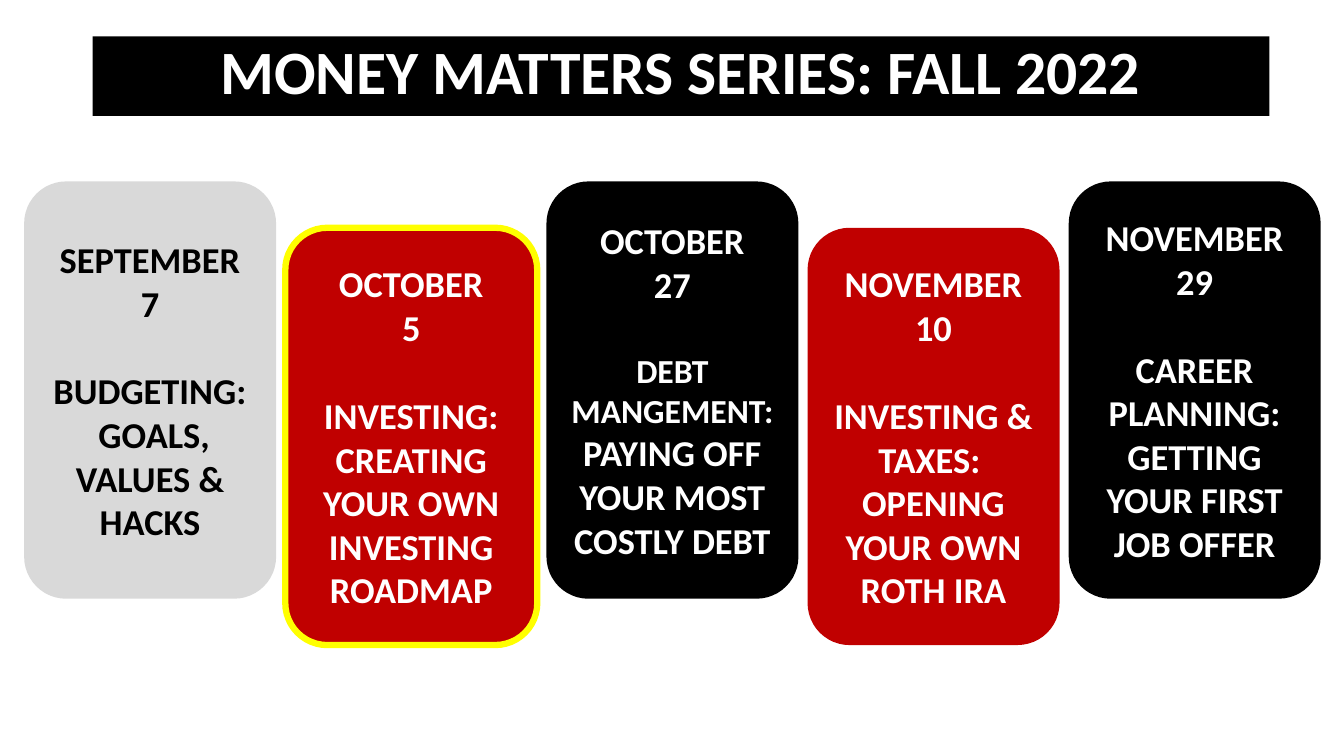
"""Build the Money Matters series slide with its five session cards."""
import dataclasses

import pptx
import pptx.dml.color
import pptx.enum.shapes
import pptx.enum.text
import pptx.slide
import pptx.util

SLIDE_WIDTH = pptx.util.Inches(13.33)
SLIDE_HEIGHT = pptx.util.Inches(7.5)
FONT = "Calibri"
BLACK, WHITE, RED, GRAY, YELLOW = "000000", "FFFFFF", "C00000", "D9D9D9", "FFFF00"
CARD_SIZE = 26
CARD_LEFT, CARD_PITCH, CARD_WIDTH = 1.8, 19.43, 18.75
CARD_TOP, CARD_DROP, CARD_HEIGHT = 24, 6.13, 55.2


@dataclasses.dataclass(frozen=True)
class Piece:
    text: str
    size: int = CARD_SIZE


@dataclasses.dataclass(frozen=True)
class Session:
    date: str
    topic: tuple[tuple[Piece, ...], ...]
    fill: str
    color: str = WHITE
    outline: str | None = None


SESSIONS = (
    Session("SEPTEMBER\v7", ((Piece("BUDGETING:"),), (Piece(" GOALS, VALUES & HACKS"),)),
            GRAY, BLACK),
    Session("OCTOBER\v5", ((Piece("INVESTING:"),),
                           (Piece("CREATING YOUR OWN INVESTING ROADMAP"),)),
            RED, outline=YELLOW),
    Session("OCTOBER\v27", ((Piece("DEBT MANGEMENT: ", 24),
                             Piece("PAYING OFF YOUR MOST COSTLY DEBT")),), BLACK),
    Session("NOVEMBER 10", ((Piece("INVESTING & TAXES: \vOPENING YOUR OWN ROTH IRA"),),), RED),
    Session("NOVEMBER\v29", ((Piece("CAREER PLANNING: GETTING YOUR FIRST JOB OFFER"),),), BLACK),
)


def across(percent: float) -> pptx.util.Emu:
    """Return a percentage of the slide width."""
    return pptx.util.Emu(round(SLIDE_WIDTH * percent / 100))


def down(percent: float) -> pptx.util.Emu:
    """Return a percentage of the slide height."""
    return pptx.util.Emu(round(SLIDE_HEIGHT * percent / 100))


def rgb(color: str) -> pptx.dml.color.RGBColor:
    """Convert a hex string to a colour."""
    return pptx.dml.color.RGBColor.from_string(color)


def format_run(run, size: int, color: str) -> None:
    """Give a run the bold lettering of the slide."""
    run.font.name = FONT
    run.font.size = pptx.util.Pt(size)
    run.font.bold = True
    run.font.color.rgb = rgb(color)


def fill_paragraph(paragraph, pieces: tuple[Piece, ...], color: str) -> None:
    """Write centred pieces of text into a paragraph."""
    paragraph.alignment = pptx.enum.text.PP_ALIGN.CENTER
    paragraph.text = pieces[0].text
    for run in paragraph.runs:
        format_run(run, pieces[0].size, color)
    for piece in pieces[1:]:
        run = paragraph.add_run()
        run.text = piece.text
        format_run(run, piece.size, color)


def draw_title(slide: pptx.slide.Slide) -> None:
    """Turn the title placeholder into the black banner."""
    title = slide.shapes.title
    title.left, title.top = across(6.9), down(4.8)
    title.width, title.height = across(87.55), down(10.53)
    title.fill.solid()
    title.fill.fore_color.rgb = rgb(BLACK)
    text_frame = title.text_frame
    text_frame.auto_size = pptx.enum.text.MSO_AUTO_SIZE.NONE
    text_frame.vertical_anchor = pptx.enum.text.MSO_ANCHOR.TOP
    paragraph = text_frame.paragraphs[0]
    fill_paragraph(paragraph, (Piece("MONEY MATTERS SERIES: FALL 2022", 44),), WHITE)
    paragraph.line_spacing = 0.9


def draw_session(slide: pptx.slide.Slide, column: int, session: Session) -> None:
    """Draw one session card, lowering every second column."""
    card = slide.shapes.add_shape(
        pptx.enum.shapes.MSO_SHAPE.ROUNDED_RECTANGLE,
        across(CARD_LEFT + column * CARD_PITCH), down(CARD_TOP + column % 2 * CARD_DROP),
        across(CARD_WIDTH), down(CARD_HEIGHT))
    card.shadow.inherit = False
    card.fill.solid()
    card.fill.fore_color.rgb = rgb(session.fill)
    if session.outline:
        card.line.color.rgb = rgb(session.outline)
        card.line.width = pptx.util.Pt(4.5)
    else:
        card.line.fill.background()
    text_frame = card.text_frame
    text_frame.word_wrap = True
    text_frame.vertical_anchor = pptx.enum.text.MSO_ANCHOR.MIDDLE
    fill_paragraph(text_frame.paragraphs[0], (Piece(session.date),), session.color)
    for index, pieces in enumerate(session.topic):
        paragraph = text_frame.add_paragraph()
        fill_paragraph(paragraph, pieces, session.color)
        if index == 0:
            paragraph.space_before = pptx.util.Pt(31.5)


def main() -> None:
    """Create and save the presentation."""
    presentation = pptx.Presentation()
    presentation.slide_width, presentation.slide_height = SLIDE_WIDTH, SLIDE_HEIGHT
    slide = presentation.slides.add_slide(presentation.slide_layouts.get_by_name("Title Only"))
    draw_title(slide)
    for column, session in enumerate(SESSIONS):
        draw_session(slide, column, session)
    presentation.save("out.pptx")


if __name__ == "__main__":
    main()
